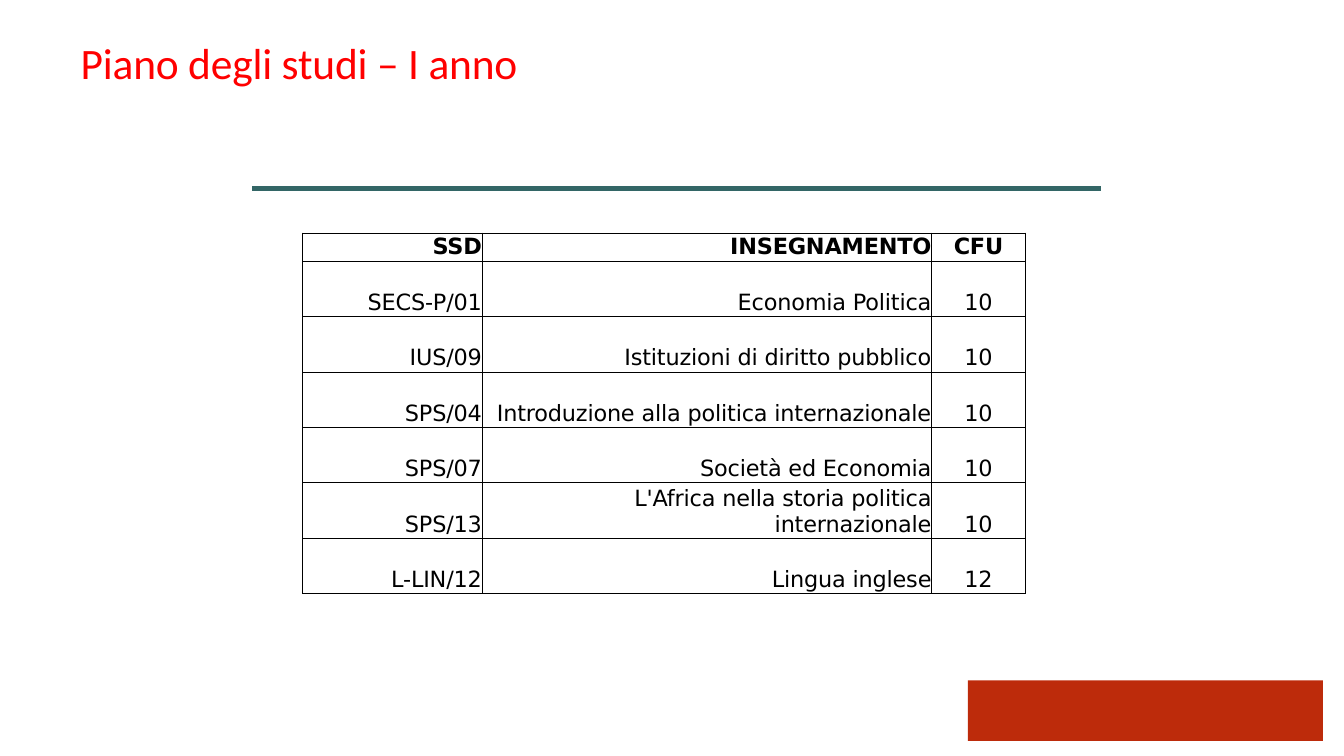
"""Build the first-year study plan slide with its table of courses."""
from lxml import etree
from pptx import Presentation
from pptx import util as u
from pptx.dml.color import RGBColor
from pptx.enum import shapes, text
from pptx.oxml import parse_xml
from pptx.oxml.ns import nsdecls, qn

PX = 9144
COLORS = {"red": "FF0000", "black": "000000", "teal": "336666", "brick": "BD2B0B"}
RIGHT, CENTER = text.PP_ALIGN.RIGHT, text.PP_ALIGN.CENTER
COLUMN_WIDTHS = [178, 446, 93]
HEADER_HEIGHT, ROW_HEIGHT = 28, 55
COURSES = [
    ("SSD", "INSEGNAMENTO", "CFU"),
    ("SECS-P/01", "Economia Politica", "10"),
    ("IUS/09", "Istituzioni di diritto pubblico", "10"),
    ("SPS/04", "Introduzione alla politica internazionale", "10"),
    ("SPS/07", "Società ed Economia", "10"),
    ("SPS/13", "L'Africa nella storia politica internazionale", "10"),
    ("L-LIN/12", "Lingua inglese", "12"),
]


def write(frame, words, *, size, font, color, align, bold=False, leading=None):
    para = frame.paragraphs[0]
    para.alignment = align
    para.line_spacing = leading
    span = para.add_run()
    span.text = words
    span.font.size, span.font.name, span.font.bold = u.Pt(size), font, bold
    span.font.color.rgb = RGBColor.from_string(COLORS[color])
    span.font._element.set("spc", "-10")


deck = Presentation()
deck.slide_width, deck.slide_height = 1333 * PX, 750 * PX
page = deck.slides.add_slide(deck.slide_layouts[5])

title = page.shapes.title
title.left, title.top, title.width, title.height = 0, 35 * PX, 593 * PX, 55 * PX
frame = title.text_frame
frame.margin_left = frame.margin_right = frame.margin_bottom = 0
frame.margin_top = PX
frame.vertical_anchor = text.MSO_ANCHOR.TOP
frame.auto_size = text.MSO_AUTO_SIZE.NONE
write(frame, "Piano degli studi – I anno", size=31, font="Calibri", color="red", align=CENTER)

block = page.shapes.add_shape(
    shapes.MSO_SHAPE.RECTANGLE, 960 * PX, 675 * PX, 352 * PX, 60 * PX)
block.shadow.inherit = False
block.fill.solid()
block.fill.fore_color.rgb = RGBColor.from_string(COLORS["brick"])
block.line.fill.background()

rule = page.shapes.add_connector(
    shapes.MSO_CONNECTOR.STRAIGHT, 250 * PX, 187 * PX, 1092 * PX, 187 * PX)
rule.line.color.rgb = RGBColor.from_string(COLORS["teal"])
rule.line.width = u.Pt(3)
etree.SubElement(rule._element.spPr, qn("a:effectLst"))

table_height = HEADER_HEIGHT + ROW_HEIGHT * (len(COURSES) - 1)
table = page.shapes.add_table(
    len(COURSES), len(COLUMN_WIDTHS), 300 * PX, 231 * PX,
    sum(COLUMN_WIDTHS) * PX, table_height * PX).table
table.first_row = table.horz_banding = False
for column, width in zip(table.columns, COLUMN_WIDTHS):
    column.width = width * PX

for row, course in enumerate(COURSES):
    table.rows[row].height = (ROW_HEIGHT if row else HEADER_HEIGHT) * PX
    for col, words in enumerate(course):
        cell = table.cell(row, col)
        cell.margin_left = cell.margin_right = 0
        cell.margin_top = cell.margin_bottom = PX
        cell.vertical_anchor = text.MSO_ANCHOR.BOTTOM
        write(cell.text_frame, words, size=16, font="DejaVu Sans", color="black",
              align=CENTER if col == 2 else RIGHT, bold=row == 0, leading=u.Pt(18.3))
        for side in ("lnL", "lnR", "lnT", "lnB"):
            cell._tc.tcPr.append(parse_xml(
                f'<a:{side} {nsdecls("a")} w="6350"><a:solidFill>'
                f'<a:srgbClr val="{COLORS["black"]}"/></a:solidFill></a:{side}>'))
        cell.fill.background()

deck.save("out.pptx")
